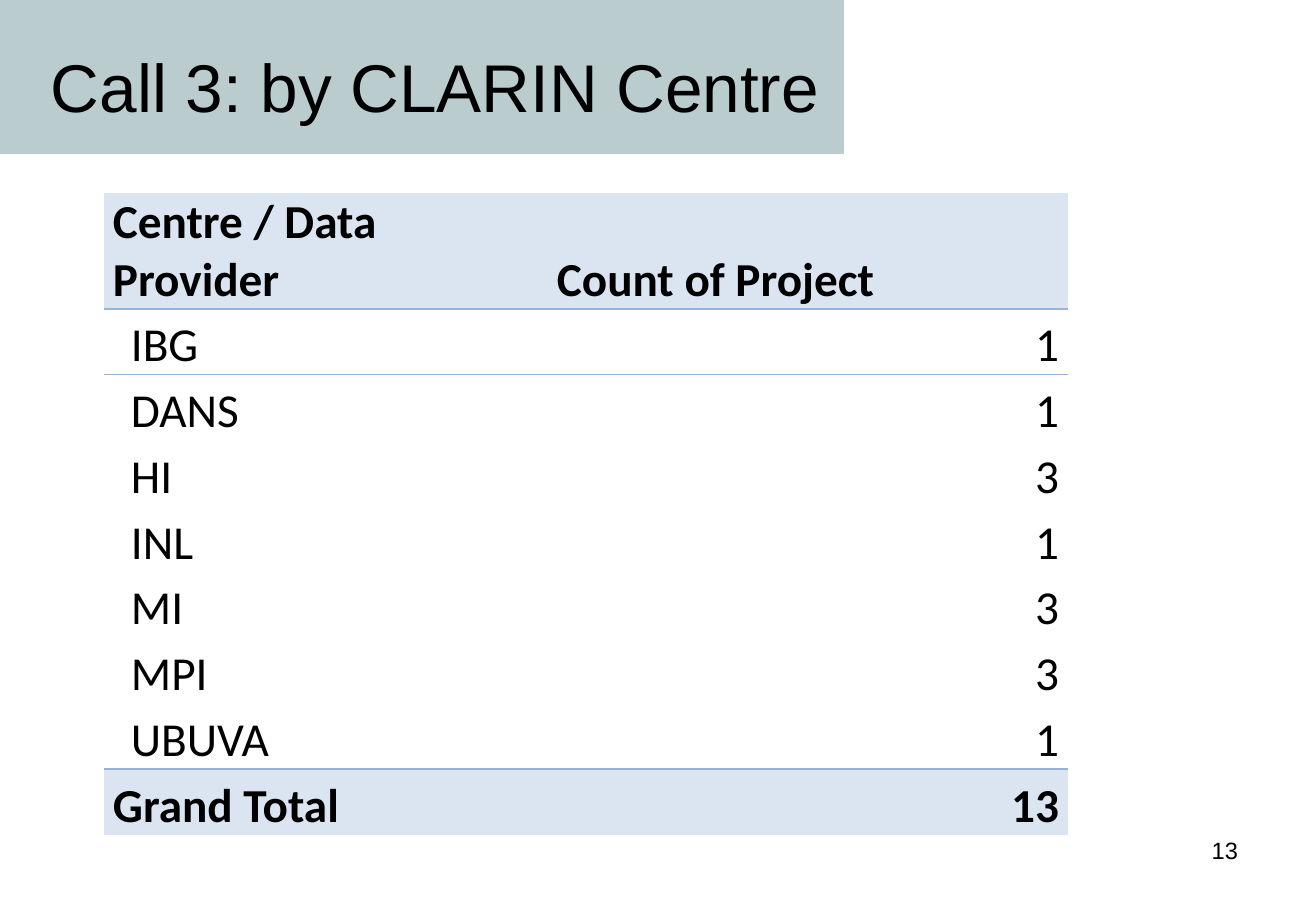
import pptx
import pptx.dml.color
import pptx.enum.shapes
import pptx.enum.text
import pptx.oxml
import pptx.oxml.ns
import pptx.util

RGBColor = pptx.dml.color.RGBColor
ALIGN = pptx.enum.text.PP_ALIGN
ANCHOR = pptx.enum.text.MSO_ANCHOR
BLACK = RGBColor(0x00, 0x00, 0x00)
BANNER = RGBColor(0xBA, 0xCC, 0xCE)
BAND = RGBColor(0xDB, 0xE5, 0xF1)
RULE = RGBColor(0x95, 0xB3, 0xD7)
NO_STYLE = "{2D5ABB26-0587-4C30-8999-92F81FD0307C}"
PX = 914400 / 121.5


def px(length):
    return round(length * PX)


def write(frame, text, font="Arial", size=14, bold=False, align=ALIGN.LEFT):
    para = frame.paragraphs[0]
    para.alignment = align
    span = para.add_run()
    span.text = text
    span.font.name = font
    span.font.size = pptx.util.Pt(size)
    span.font.bold = bold
    span.font.color.rgb = BLACK
    return para


deck = pptx.Presentation()
deck.slide_width, deck.slide_height = px(1316), px(911)
page = deck.slides.add_slide(deck.slide_layouts[6])

banner = page.shapes.add_shape(
    pptx.enum.shapes.MSO_SHAPE.RECTANGLE, 0, 0, px(844), px(154))
banner.shadow.inherit = False
banner.fill.solid()
banner.fill.fore_color.rgb = BANNER
banner.line.fill.background()

number = page.shapes.add_textbox(px(943), px(830), px(307), px(63))
number.text_frame.word_wrap = True
write(number.text_frame, "13", align=ALIGN.RIGHT)

title = page.shapes.add_textbox(px(39), px(34), px(840), px(109))
title.text_frame.word_wrap = True
title.text_frame.vertical_anchor = ANCHOR.MIDDLE
title.text_frame.margin_top, title.text_frame.margin_bottom = 0, px(6)
write(title.text_frame, "Call 3: by CLARIN Centre", size=40)

centres = [("IBG", 1), ("DANS", 1), ("HI", 3), ("INL", 1),
           ("MI", 3), ("MPI", 3), ("UBUVA", 1)]
total = sum(count for name, count in centres)
rows = [("Centre / Data Provider", "Count of Project"),
        *centres, ("Grand Total", total)]
last = len(rows) - 1
header_height, body_height = 116, 526

holder = page.shapes.add_table(
    len(rows), 2, px(104), px(193), px(964), px(header_height + body_height))
table = holder.table
table.first_row = table.horz_banding = False
table._tbl.tblPr.find(pptx.oxml.ns.qn("a:tableStyleId")).text = NO_STYLE
table.columns[0].width, table.columns[1].width = px(444), px(520)

# Rules run under the header and above the total, on both adjoining rows.
borders = {0: "lnB", 1: "lnT", last - 1: "lnB", last: "lnT"}
for row, values in enumerate(rows):
    table.rows[row].height = px(body_height) // last if row else px(header_height)
    banded = row in (0, last)
    for column, value in enumerate(values):
        cell = table.cell(row, column)
        cell.vertical_anchor = ANCHOR.BOTTOM
        cell.margin_left = cell.margin_right = px(9)
        cell.margin_top = cell.margin_bottom = 0
        if banded:
            cell.fill.solid()
            cell.fill.fore_color.rgb = BAND
        else:
            cell.fill.background()
        para = write(cell.text_frame, str(value), font="Calibri", size=28, bold=banded,
                     align=ALIGN.RIGHT if row and column else ALIGN.LEFT)
        if column == 0 and not banded:
            properties = para._p.get_or_add_pPr()
            properties.set("marL", "0")
            properties.set("indent", str(px(18)))
        if row in borders:
            side = borders[row]
            cell._tc.get_or_add_tcPr().insert(0, pptx.oxml.parse_xml(
                f'<a:{side} {pptx.oxml.ns.nsdecls("a")} w="12700"><a:solidFill>'
                f'<a:srgbClr val="{RULE}"/></a:solidFill></a:{side}>'))

deck.save("out.pptx")
